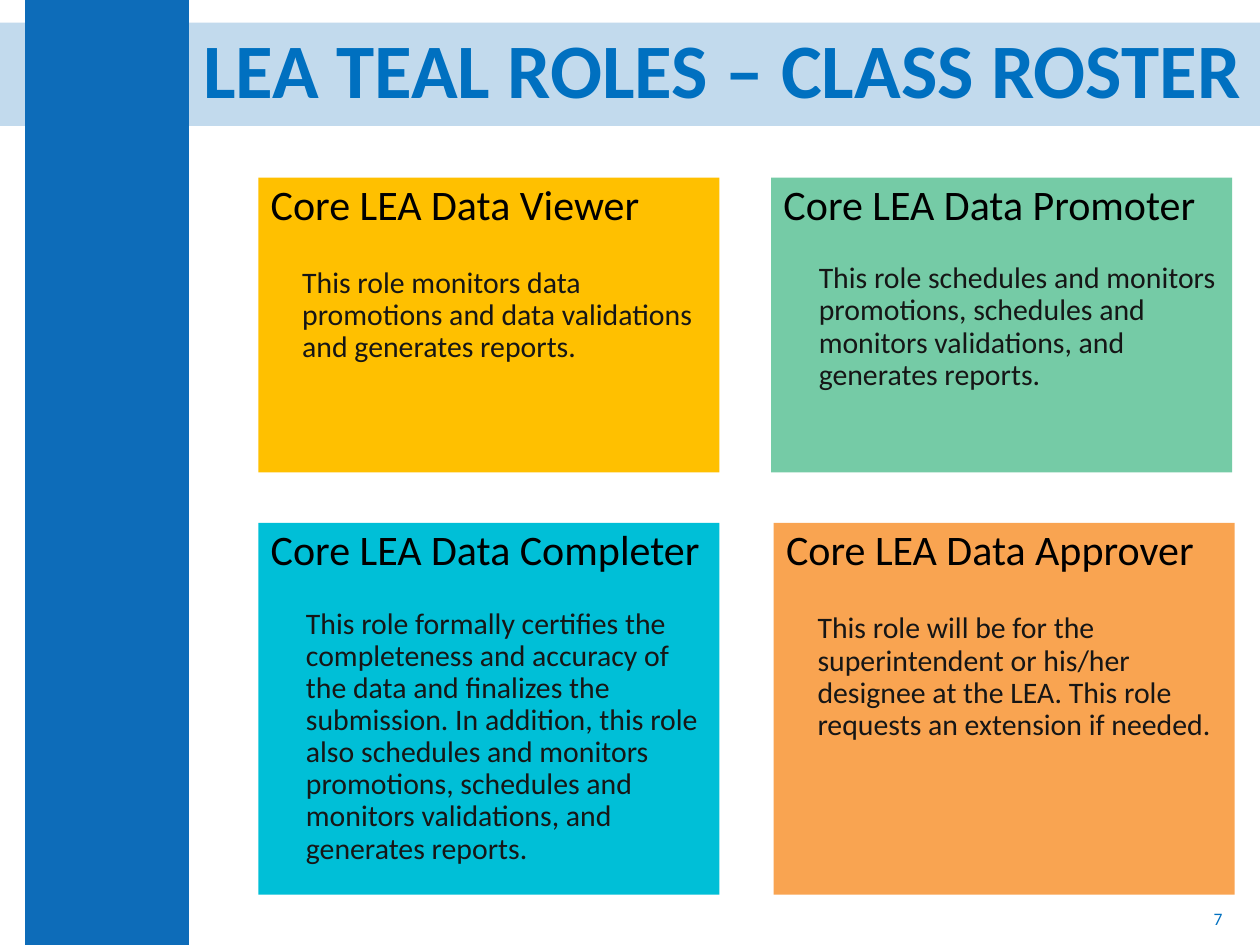
"""Build the class roster roles slide."""
import pptx
import pptx.util
import pptx.dml.color
import pptx.enum.shapes
import pptx.enum.text
import pptx.oxml
import pptx.oxml.ns

Inches, Pt = pptx.util.Inches, pptx.util.Pt
ALIGN = pptx.enum.text.PP_ALIGN
ANCHOR = pptx.enum.text.MSO_ANCHOR

THEME = {
    "font": "Calibri", "bar": "0D6CB9", "accent": "0070C0",
    "head": "000000", "body": "161616",
    "title_pt": 44, "head_pt": 24, "body_pt": 17, "page_pt": 10,
    "spacing": 0.9,
}
TITLE = "LEA TEAL ROLES – CLASS ROSTER"
PAGE = "7"
ROWS = [(1.41, 2.34), (4.15, 2.95)]
WIDTH = 3.66
ROLES = [
    {"row": 0, "left": 2.05, "fill": "FFC000", "indent": 0.25, "gap": 22.2,
     "name": "Core LEA Data Viewer",
     "text": "This role monitors data promotions and data validations "
             "and generates reports."},
    {"row": 1, "left": 2.05, "fill": "00BFD7", "indent": 0.28, "gap": 19.4,
     "name": "Core LEA Data Completer",
     "text": "This role formally certifies the completeness and accuracy of "
             "the data and finalizes the submission. In addition, this role "
             "also schedules and monitors promotions, schedules and monitors "
             "validations, and generates reports."},
    {"row": 0, "left": 6.12, "fill": "75CBA6", "indent": 0.28, "gap": 19.4,
     "name": "Core LEA Data Promoter",
     "text": "This role schedules and monitors promotions, schedules and "
             "monitors validations, and generates reports."},
    {"row": 1, "left": 6.14, "fill": "F9A451", "indent": 0.25, "gap": 22.2,
     "name": "Core LEA Data Approver",
     "text": "This role will be for the superintendent or his/her designee "
             "at the LEA. This role requests an extension if needed."},
]


def color(key):
    return pptx.dml.color.RGBColor.from_string(THEME.get(key, key))


def block(slide, place, fill):
    kind = pptx.enum.shapes.MSO_SHAPE.RECTANGLE
    shape = slide.shapes.add_shape(kind, *map(Inches, place))
    shape.shadow.inherit = False
    shape.fill.solid()
    shape.fill.fore_color.rgb = color(fill)
    shape.line.fill.background()
    return shape


def style(para, size, ink, align, bold=False):
    para.alignment = align
    para.line_spacing = THEME["spacing"]
    for run in para.runs:
        font = run.font
        font.name, font.size, font.bold = THEME["font"], Pt(THEME[size]), bold
        font.color.rgb = color(ink)


def label(slide, place, text, size, align, bold=False):
    frame = slide.shapes.add_textbox(*map(Inches, place)).text_frame
    frame.text = text
    frame.word_wrap = True
    frame.vertical_anchor = ANCHOR.MIDDLE
    style(frame.paragraphs[0], size, "accent", align, bold)


def card(slide, role):
    top, height = ROWS[role["row"]]
    place = (role["left"], top, WIDTH, height)
    frame = block(slide, place, role["fill"]).text_frame
    frame.word_wrap = True
    frame.vertical_anchor = ANCHOR.TOP
    frame.text = role["name"] + "\n" + role["text"]
    head, body = frame.paragraphs
    style(head, "head_pt", "head", ALIGN.LEFT)
    style(body, "body_pt", "body", ALIGN.LEFT)
    body.space_before = Pt(role["gap"])
    props = body._p.get_or_add_pPr()
    props.set("marL", str(Inches(role["indent"])))
    props.set("indent", "0")


def main():
    deck = pptx.Presentation()
    deck.slide_width, deck.slide_height = Inches(10), Inches(7.5)
    slide = deck.slides.add_slide(deck.slide_layouts[6])
    band = block(slide, (0, 0.18, 10, 0.82), "bar")
    tint = band._element.spPr.find(".//" + pptx.oxml.ns.qn("a:srgbClr"))
    alpha = pptx.oxml.parse_xml(
        "<a:alpha %s val='25000'/>" % pptx.oxml.ns.nsdecls("a"))
    tint.append(alpha)
    block(slide, (0.2, 0, 1.3, 7.5), "bar")
    label(slide, (1.47, 0.27, 8.53, 0.63), TITLE, "title_pt",
          ALIGN.CENTER, True)
    label(slide, (7.55, 7.1, 2.25, 0.4), PAGE, "page_pt", ALIGN.RIGHT)
    for role in ROLES:
        card(slide, role)
    deck.save("out.pptx")


if __name__ == "__main__":
    main()
